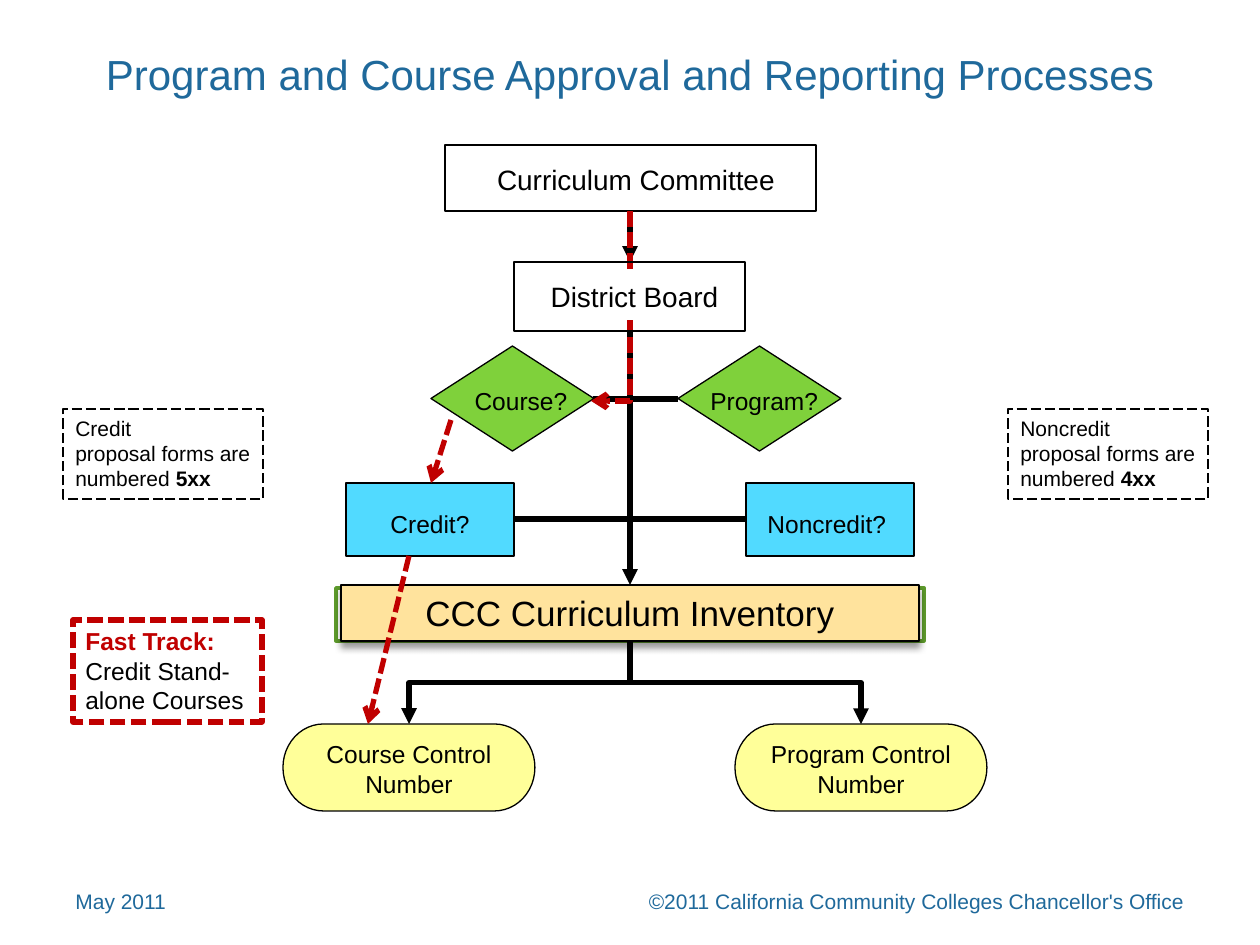
import pptx
import pptx.util
import pptx.dml.color
import pptx.enum.dml
import pptx.enum.shapes
import pptx.enum.text
import pptx.oxml.ns
from dataclasses import dataclass
from lxml import etree

KIND = pptx.enum.shapes.MSO_SHAPE
LINK = pptx.enum.shapes.MSO_CONNECTOR
ALIGN = pptx.enum.text.PP_ALIGN
ANCHOR = pptx.enum.text.MSO_ANCHOR
DASH = pptx.enum.dml.MSO_LINE
qn = pptx.oxml.ns.qn


@dataclass(frozen=True)
class Theme:
    font: str = "Arial"
    ink: str = "000000"
    paper: str = "FFFFFF"
    title: str = "1F699B"
    fast: str = "C00000"
    choice: str = "7FD13B"
    type: str = "51DAFF"
    store: str = "FFE39D"
    rim: str = "5E9B2C"
    number: str = "FFFF99"
    head: int = 24
    big: int = 20
    mid: int = 16
    base: int = 14
    small: int = 12
    thin: float = 0.75
    thick: int = 3


T = Theme()


def px(n):
    return round(n * 914400 / 126)


def rgb(code):
    return pptx.dml.color.RGBColor.from_string(code)


def write(shape, paras, size, color=T.ink, align=ALIGN.LEFT, anchor=ANCHOR.TOP):
    """Fill a shape with paragraphs, each a list of (text, bold, color) runs."""
    frame = shape.text_frame
    frame.word_wrap = True
    frame.vertical_anchor = anchor
    if isinstance(paras, str):
        paras = [[(paras, False, color)]]
    for i, runs in enumerate(paras):
        para = frame.paragraphs[0] if i == 0 else frame.add_paragraph()
        para.alignment = align
        for text, bold, tint in runs:
            run = para.add_run()
            run.text = text
            run.font.name = T.font
            run.font.size = pptx.util.Pt(size)
            run.font.bold = bold
            run.font.color.rgb = rgb(tint)


def label(slide, box, text, size, fill=None, **style):
    shape = slide.shapes.add_textbox(*map(px, box))
    if fill:
        shape.fill.solid()
        shape.fill.fore_color.rgb = rgb(fill)
    write(shape, text, size, **style)


def block(slide, kind, box, fill=None, line=T.ink, width=T.thin, dash=None):
    shape = slide.shapes.add_shape(kind, *map(px, box))
    shape.shadow.inherit = False
    if fill:
        shape.fill.solid()
        shape.fill.fore_color.rgb = rgb(fill)
    else:
        shape.fill.background()
    shape.line.color.rgb = rgb(line)
    shape.line.width = pptx.util.Pt(width)
    if dash:
        shape.line.dash_style = dash
    return shape


def shade(shape):
    """Soft shadow straight below the shape."""
    effects = shape._element.spPr.find(qn("a:effectLst"))
    outer = etree.SubElement(effects, qn("a:outerShdw"), blurRad="50800",
                             dist="38100", dir="5400000", rotWithShape="0")
    color = etree.SubElement(outer, qn("a:srgbClr"), val=T.ink)
    etree.SubElement(color, qn("a:alpha"), val="40000")


def link(slide, start, end, color=T.ink, head=None, dash=None, bend=None):
    """Straight line, or an elbow that leaves downward when bend is given."""
    (x1, y1), (x2, y2) = start, end
    if bend:
        # The elbow is laid out sideways, then turned a quarter about its centre.
        mx, my, dx, dy = (x1 + x2) / 2, (y1 + y2) / 2, x2 - x1, y2 - y1
        ends = mx - dy / 2, my + dx / 2, mx + dy / 2, my - dx / 2
    else:
        ends = x1, y1, x2, y2
    kind = LINK.ELBOW if bend else LINK.STRAIGHT
    line = slide.shapes.add_connector(kind, *map(px, ends))
    props = line._element.spPr
    if bend:
        props.find(qn("a:xfrm")).set("rot", "5400000")
        props.find(qn("a:prstGeom")).set("prst", bend)
    line.line.color.rgb = rgb(color)
    line.line.width = pptx.util.Pt(T.thick)
    if dash:
        line.line.dash_style = dash
    if head:
        etree.SubElement(props.find(qn("a:ln")), qn("a:tailEnd"), type=head)
    etree.SubElement(props, qn("a:effectLst"))


def main():
    deck = pptx.Presentation()
    deck.slide_width, deck.slide_height = px(1260), px(945)
    slide = deck.slides.add_slide(deck.slide_layouts[6])
    mid = 630

    # Title and footer
    label(slide, (0, 42, 1260, 64), "Program and Course Approval and Reporting Processes",
          T.head, color=T.title, align=ALIGN.CENTER)
    label(slide, (63, 876, 294, 50), "May 2011", T.small, color=T.title,
          anchor=ANCHOR.MIDDLE)
    label(slide, (630, 876, 567, 50),
          "©2011 California Community Colleges Chancellor's Office",
          T.small, color=T.title, align=ALIGN.RIGHT, anchor=ANCHOR.MIDDLE)

    # Committee
    block(slide, KIND.FLOWCHART_PROCESS, (445, 145, 371, 66))
    label(slide, (471, 156, 330, 47), "Curriculum Committee", T.mid, align=ALIGN.CENTER)

    # Choices and control numbers
    for x, text, align in ((431, "Course?", ALIGN.CENTER), (678, "Program?", ALIGN.LEFT)):
        block(slide, KIND.FLOWCHART_DECISION, (x, 346, 163, 105), T.choice)
        label(slide, (x + 20, 380, 140, 42), text, T.base, align=align)
    for x, inset, text in ((346, 32, "Credit?"), (746, 9, "Noncredit?")):
        block(slide, KIND.RECTANGLE, (x, 483, 168, 73), T.type)
        label(slide, (x + inset, 503, 145, 43), text, T.base)
    for x, text in ((283, "Course Control Number"), (735, "Program Control Number")):
        block(slide, KIND.FLOWCHART_TERMINATOR, (x, 724, 252, 87), T.number)
        label(slide, (x + 22, 733, 208, 72), text, T.base, align=ALIGN.CENTER)

    # Inventory
    block(slide, KIND.RECTANGLE, (336, 588, 588, 53), line=T.rim, width=2)
    store = block(slide, KIND.RECTANGLE, (341, 585, 578, 56), T.store, width=1)
    shade(store)
    write(store, "CCC Curriculum Inventory", T.big, align=ALIGN.CENTER)

    # Main flow
    for top, end in ((211, 262), (331, 585)):
        link(slide, (mid, top), (mid, end), head="triangle")
    for x in (409, 861):
        link(slide, (mid, 641), (x, 724), head="triangle", bend="bentConnector3")
    link(slide, (593, 399), (678, 399))
    link(slide, (514, 519), (746, 519))

    # Fast track
    fast = {"color": T.fast, "head": "arrow", "dash": DASH.SQUARE_DOT}
    link(slide, (mid, 211), (591, 401), bend="bentConnector2", **fast)
    link(slide, (451, 420), (431, 483), **fast)
    link(slide, (409, 556), (368, 724), **fast)
    key = block(slide, KIND.RECTANGLE, (73, 620, 189, 102), line=T.fast,
                width=T.thick, dash=DASH.SQUARE_DOT)
    write(key, [[("Fast Track: ", True, T.fast),
                 ("Credit Stand-alone Courses", False, T.ink)]], T.base)

    # Form notes
    for x, name, code in ((63, "Credit", "5xx"), (1008, "Noncredit", "4xx")):
        note = block(slide, KIND.RECTANGLE, (x, 409, 200, 90), dash=DASH.LONG_DASH)
        write(note, [[(name, False, T.ink)],
                     [("proposal forms are numbered ", False, T.ink),
                      (code, True, T.ink)]], T.small)

    # Board, with its label over the fast track
    block(slide, KIND.FLOWCHART_PROCESS, (514, 262, 231, 69))
    label(slide, (532, 273, 205, 47), "District Board", T.mid, T.paper,
          align=ALIGN.CENTER)

    deck.save("out.pptx")


if __name__ == "__main__":
    main()
